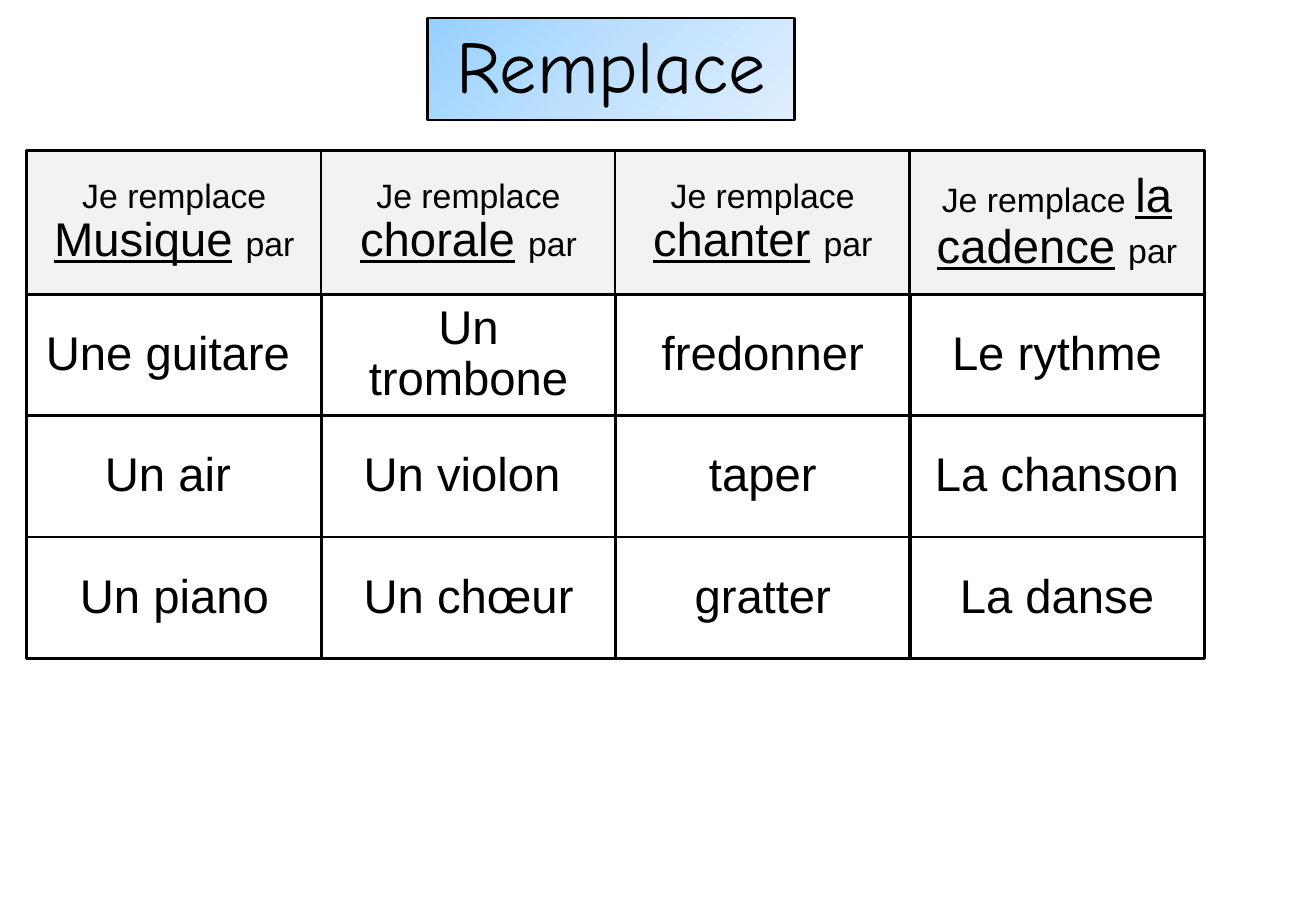
"""Build the word-replacement exercise slide."""
from copy import deepcopy
from dataclasses import dataclass

from pptx import Presentation
from pptx.dml.color import RGBColor
from pptx.enum.shapes import MSO_SHAPE
from pptx.enum.text import MSO_ANCHOR, MSO_AUTO_SIZE, PP_ALIGN
from pptx.oxml.ns import qn
from pptx.util import Cm, Pt

TITLE = "Remplace"
COLUMNS = [
    ("Musique", ["Une guitare ", "Un air ", "Un piano"]),
    ("chorale", ["Un trombone", "Un violon ", "Un chœur"]),
    ("chanter", ["fredonner", "taper", "gratter"]),
    ("la cadence", ["Le rythme", "La chanson", "La danse"]),
]


@dataclass(frozen=True)
class Theme:
    ink: str = "000000"
    header: str = "F2F2F2"
    gradient: tuple = ((0, "96D0FF"), (0.5, "BFE1FF"), (1, "E0EFFF"))
    title_font: str = "Comic Neue"
    body_font: str = "Arial"
    title_size: int = 44
    word_size: int = 28
    label_size: int = 20
    line: float = 1.5


THEME = Theme()
LEFT, TOP = 0.56, 3.15
COL_W, COL_STEP = 6.17, 6.15
HEADER_H, ROW_H = 3.02, 2.54
BODY_TOP = 6.15


def outline(sp):
    sp.line.color.rgb = RGBColor.from_string(THEME.ink)
    sp.line.width = Pt(THEME.line)


def write(sp, runs, font, before=0):
    tf = sp.text_frame
    tf.word_wrap = True
    tf.auto_size = MSO_AUTO_SIZE.NONE
    tf.vertical_anchor = MSO_ANCHOR.MIDDLE
    tf.margin_left = tf.margin_right = Cm(0.3)
    p = tf.paragraphs[0]
    p.alignment = PP_ALIGN.CENTER
    p.line_spacing = 0.9
    p.space_before = Pt(before)
    for text, size, underline in runs:
        r = p.add_run()
        r.text = text
        r.font.name = font
        r.font.size = Pt(size)
        r.font.underline = underline
        r.font.color.rgb = RGBColor.from_string(THEME.ink)


def add_title(s):
    sp = s.shapes.title
    sp.left, sp.top, sp.width, sp.height = Cm(8.94), Cm(0.38), Cm(7.67), Cm(2.13)
    sp.fill.gradient()
    sp.fill.gradient_angle = 315
    stops = sp.element.spPr.find(".//" + qn("a:gsLst"))
    stops.insert(1, deepcopy(stops[0]))
    for stop, (position, color) in zip(sp.fill.gradient_stops, THEME.gradient):
        stop.position = position
        stop.color.rgb = RGBColor.from_string(color)
    outline(sp)
    write(sp, [(TITLE, THEME.title_size, False)], THEME.title_font)


def add_cell(s, col, top, height, runs, fill=None):
    sp = s.shapes.add_shape(MSO_SHAPE.RECTANGLE, Cm(LEFT + col * COL_STEP),
                            Cm(top), Cm(COL_W), Cm(height))
    sp.shadow.inherit = False
    if fill:
        sp.fill.solid()
        sp.fill.fore_color.rgb = RGBColor.from_string(fill)
    else:
        sp.fill.background()
    outline(sp)
    write(sp, runs, THEME.body_font, before=10)


def main():
    prs = Presentation()
    prs.slide_width, prs.slide_height = Cm(27.51), Cm(19.05)
    s = prs.slides.add_slide(prs.slide_layouts[5])
    add_title(s)
    for col, (word, answers) in enumerate(COLUMNS):
        header = [("Je remplace ", THEME.label_size, False),
                  (word, THEME.word_size, True),
                  (" ", THEME.word_size, False),
                  ("par", THEME.label_size, False)]
        add_cell(s, col, TOP, HEADER_H, header, THEME.header)
        for row, answer in enumerate(answers):
            add_cell(s, col, BODY_TOP + row * ROW_H, ROW_H,
                     [(answer, THEME.word_size, False)])
    prs.save("out.pptx")


if __name__ == "__main__":
    main()
